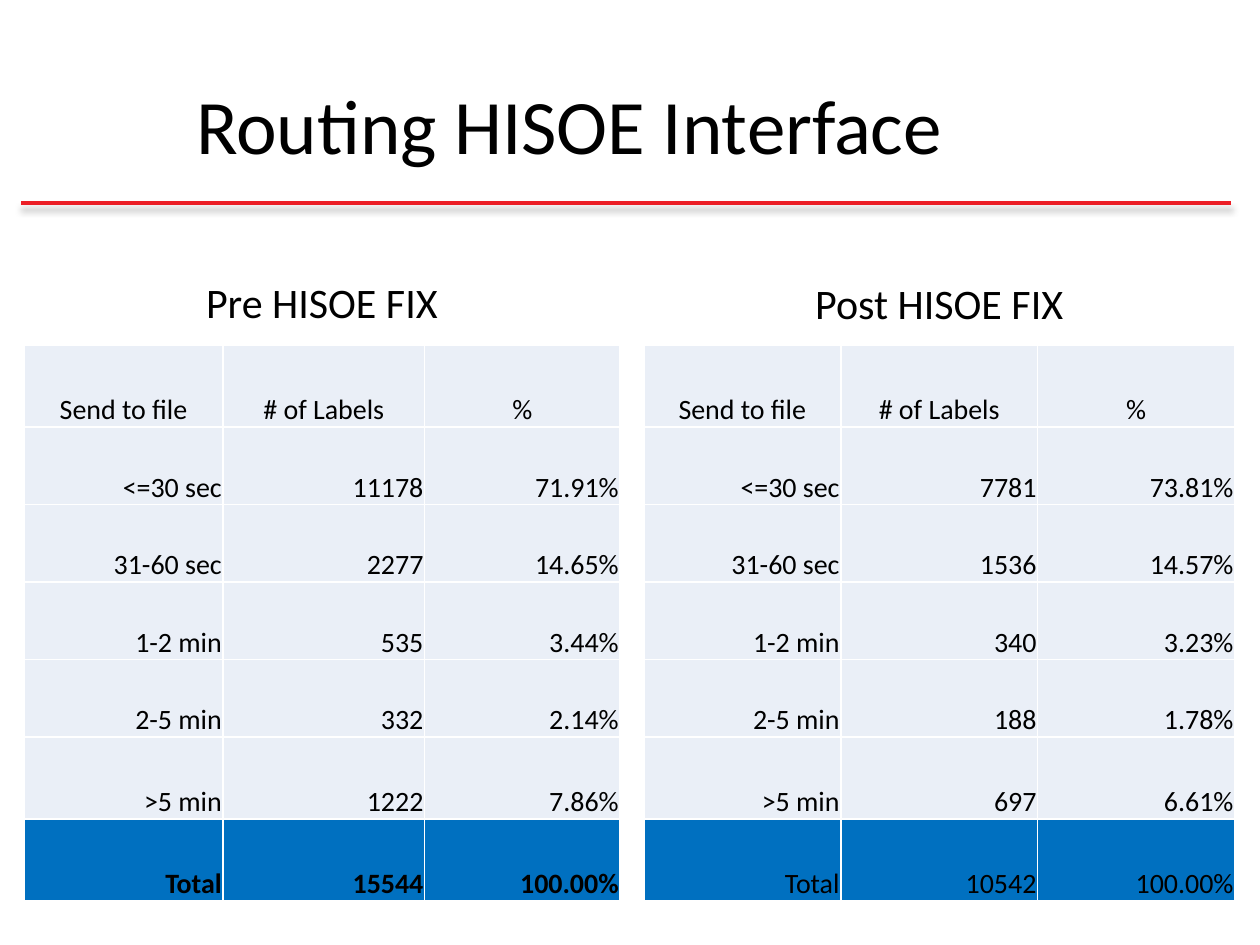
"""Build the slide that compares label routing times before and after the HISOE fix."""
from lxml import etree
from pptx import Presentation
from pptx.dml.color import RGBColor
from pptx.enum.shapes import MSO_CONNECTOR
from pptx.enum.text import MSO_ANCHOR, PP_ALIGN
from pptx.oxml import parse_xml
from pptx.oxml.ns import nsdecls
from pptx.util import Inches, Pt

STRAIGHT = MSO_CONNECTOR.STRAIGHT
MIDDLE, BOTTOM = MSO_ANCHOR.MIDDLE, MSO_ANCHOR.BOTTOM
CENTER, RIGHT = PP_ALIGN.CENTER, PP_ALIGN.RIGHT

COLORS = {"ink": "000000", "rule": "EC1F27", "body": "EAEFF7", "total": "0070C0", "border": "FFFFFF"}
GRID_COLUMNS, GRID_ROWS = 100, 75
HEADINGS = ["Send to file", "# of Labels", "%"]
INTERVALS = ["<=30 sec", "31-60 sec", "1-2 min", "2-5 min", ">5 min", "Total"]
ROW_HEIGHTS = [6.5, 6.15, 6.15, 6.15, 6.15, 6.5, 6.5]
PANELS = [
    {
        "heading": "Pre HISOE FIX", "left": 1.9, "top": 17.5, "widths": [15.8, 16, 15.5], "bold_total": True,
        "counts": [11178, 2277, 535, 332, 1222, 15544],
        "shares": ["71.91%", "14.65%", "3.44%", "2.14%", "7.86%", "100.00%"],
    },
    {
        "heading": "Post HISOE FIX", "left": 51.1, "top": 17.6, "widths": [15.63] * 3, "bold_total": False,
        "counts": [7781, 1536, 340, 188, 697, 10542],
        "shares": ["73.81%", "14.57%", "3.23%", "1.78%", "6.61%", "100.00%"],
    },
]


def color(name):
    return RGBColor.from_string(COLORS[name])


class SlideBuilder:
    """Hold the style and the current slide, and place elements on its grid."""

    font = "Calibri"

    def __init__(self, deck):
        self.slide = deck.slides.add_slide(deck.slide_layouts[6])
        self.column = deck.slide_width / GRID_COLUMNS
        self.row = deck.slide_height / GRID_ROWS

    def across(self, columns):
        return round(columns * self.column)

    def down(self, rows):
        return round(rows * self.row)

    def box(self, left, top, width, height):
        return self.across(left), self.down(top), self.across(width), self.down(height)

    def set_words(self, frame, words, size, align, bold=False):
        paragraph = frame.paragraphs[0]
        paragraph.alignment = align
        run = paragraph.add_run()
        run.text = words
        for attribute, value in {"name": self.font, "size": Pt(size), "bold": bold}.items():
            setattr(run.font, attribute, value)
        run.font.color.rgb = color("ink")
        return paragraph

    def text(self, words, place, size, anchor, spacing=1.0):
        frame = self.slide.shapes.add_textbox(*self.box(*place)).text_frame
        frame.word_wrap = True
        frame.vertical_anchor = anchor
        self.set_words(frame, words, size, CENTER).line_spacing = spacing

    def rule(self, left, right, level):
        line = self.slide.shapes.add_connector(
            STRAIGHT, self.across(left), self.down(level), self.across(right), self.down(level))
        line.line.color.rgb = color("rule")
        line.line.width = Pt(2.25)
        line._element.spPr.append(parse_xml(
            f'<a:effectLst {nsdecls("a")}>'
            f'<a:outerShdw blurRad="{Pt(4)}" dist="{Pt(3)}" dir="5400000" rotWithShape="0">'
            f'<a:srgbClr val="{COLORS["ink"]}"><a:alpha val="40000"/></a:srgbClr>'
            '</a:outerShdw></a:effectLst>'))

    def cell(self, cell, words, align, fill, bold):
        margins = dict.fromkeys(["margin_left", "margin_right", "margin_top"], Inches(0.01))
        for attribute, value in {**margins, "margin_bottom": 0, "vertical_anchor": BOTTOM}.items():
            setattr(cell, attribute, value)
        properties = cell._tc.get_or_add_tcPr()
        for side in ("lnL", "lnR", "lnT", "lnB"):
            border = parse_xml(f'<a:{side} {nsdecls("a")} w="{Pt(1)}"><a:solidFill/></a:{side}>')
            etree.SubElement(border[0], border[0].tag.replace("solidFill", "srgbClr"), val=COLORS["border"])
            properties.append(border)
        cell.fill.solid()
        cell.fill.fore_color.rgb = color(fill)
        self.set_words(cell.text_frame, words, 16, align, bold)

    def table(self, records, left, top, widths, heights, bold_total):
        place = self.box(left, top, sum(widths), sum(heights))
        table = self.slide.shapes.add_table(len(records), len(widths), *place).table
        table.first_row = table.horz_banding = False
        for column, width in zip(table.columns, widths):
            column.width = self.across(width)
        for row, height in zip(table.rows, heights):
            row.height = self.down(height)
        last = len(records) - 1
        for r, record in enumerate(records):
            for c, words in enumerate(record):
                self.cell(table.cell(r, c), str(words), RIGHT if r else CENTER,
                          "total" if r == last else "body", bold_total and r == last)


def main():
    deck = Presentation()
    deck.slide_width, deck.slide_height = Inches(10), Inches(7.5)
    builder = SlideBuilder(deck)
    builder.rule(1.7, 97.7, 16.1)
    builder.text("Routing HISOE Interface", (1.9, 3, 86.6, 13.6), 44, MIDDLE)
    for panel in PANELS:
        left, widths = panel["left"], panel["widths"]
        builder.text(panel["heading"], (left, panel["top"], sum(widths), 9), 24, BOTTOM, 0.9)
        records = [HEADINGS, *zip(INTERVALS, panel["counts"], panel["shares"])]
        builder.table(records, left, 27.4, widths, ROW_HEIGHTS, panel["bold_total"])
    deck.save("out.pptx")


if __name__ == "__main__":
    main()
